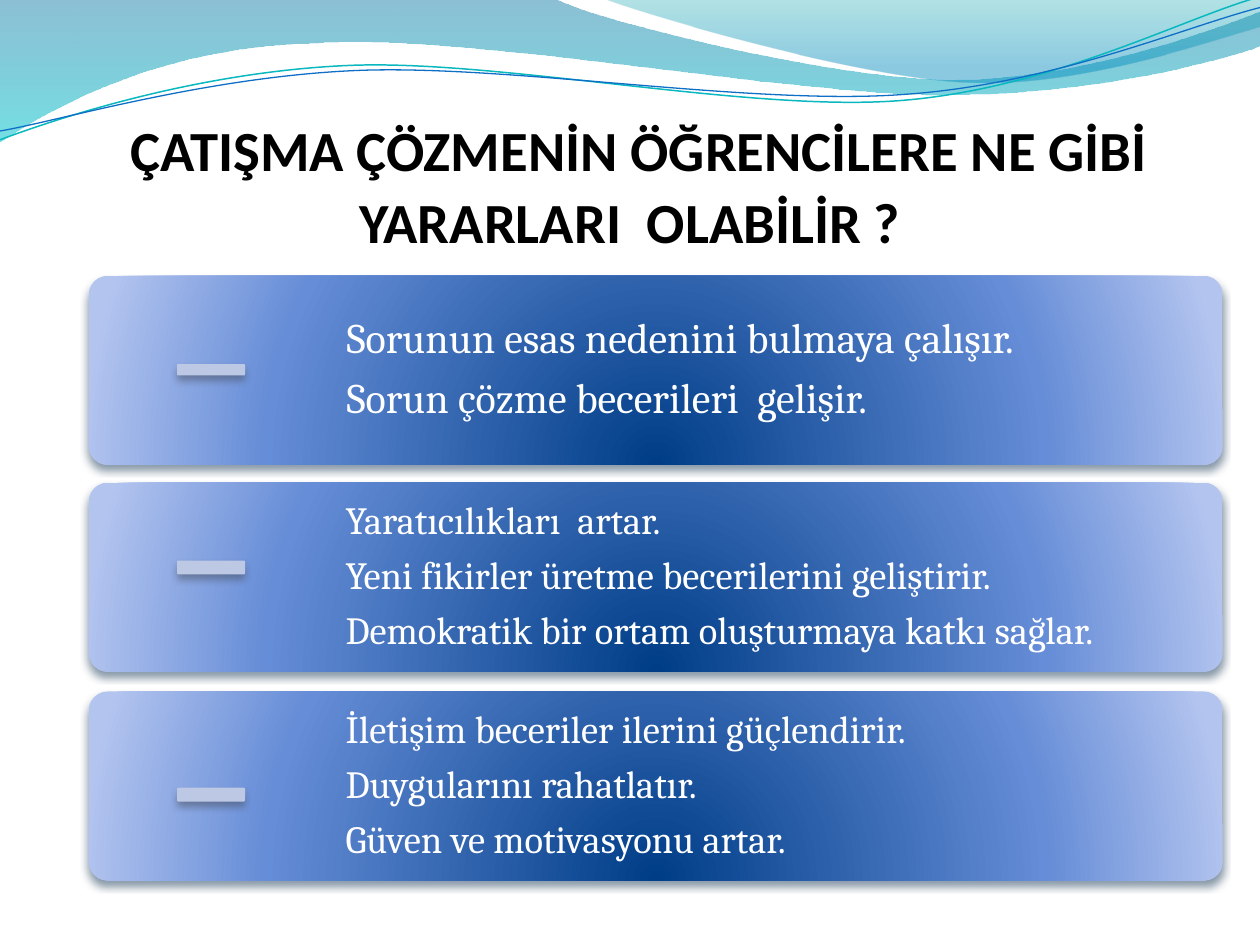
from pptx import Presentation
from pptx.dml.color import RGBColor
from pptx.enum.shapes import MSO_SHAPE as SHAPE
from pptx.enum.text import MSO_ANCHOR as ANCHOR, MSO_AUTO_SIZE as AUTO, PP_ALIGN as ALIGN
from pptx.oxml import parse_xml
from pptx.oxml.ns import nsdecls
from pptx.util import Cm, Pt

C = {"black": "000000", "white": "FFFFFF", "title": "04617B", "dash": "BDC8E5",
     "card_shadow": "042747", "dash_shadow": "424651",
     "teal_line": "0AB8BF", "blue_line": "0F6FC6"}
CARD_STOPS = [(0, "003D87", 100), (68, "668DD7", 100), (100, "B3C4EF", 100)]
CARD_DIRECTION = ('<a:path path="circle"><a:fillToRect l="50000" t="130000" '
                  'r="50000" b="-30000"/></a:path>')
DOWN = '<a:lin ang="5400000" scaled="0"/>'


def set_gradient(sp, stops, direction):
    sp.fill.gradient()
    old = sp._element.spPr.find("{*}gradFill")
    gs = "".join(f'<a:gs pos="{pos * 1000}"><a:srgbClr val="{color}">'
                 f'<a:alpha val="{alpha * 1000}"/></a:srgbClr></a:gs>'
                 for pos, color, alpha in stops)
    old.getparent().replace(old, parse_xml(
        f'<a:gradFill {nsdecls("a")} rotWithShape="1"><a:gsLst>{gs}</a:gsLst>{direction}</a:gradFill>'))


def set_shadow(sp, color):
    sp.shadow.inherit = False
    sp._element.spPr.find("{*}effectLst").append(parse_xml(
        f'<a:outerShdw {nsdecls("a")} blurRad="{Pt(4.5)}" dist="{Pt(3)}" dir="5400000" '
        f'rotWithShape="0"><a:srgbClr val="{color}"><a:alpha val="48000"/></a:srgbClr></a:outerShdw>'))


prs = Presentation()
prs.slide_width, prs.slide_height = Cm(25.4), Cm(19.05)
s = prs.slides.add_slide(prs.slide_layouts[5])

# Waves: start point, then segments (2 numbers = line, 6 = Bezier curve), 1000 units = slide width
UNIT = Cm(0.0254)
waves = [
    ((0, 0), [(440, -1), (476, 17, 664, 63, 758, 63), (853, 63, 958, 26, 1000, 9),
              (1001, 36), (983, 44, 870, 76, 746, 75), (622, 75, 382, 28, 257, 34),
              (129, 36, 46, 83, -1, 113)],
     [(0, "0074A1", 45), (100, "00C6CF", 55)], None),
    ((479, -1), [(509, 11, 682, 62, 769, 65), (856, 69, 961, 32, 1000, 21), (1000, 0)],
     [(0, "00A1A9", 30), (80, "008BBF", 45)], None),
    ((0, 111), [(48, 93, 158, 57, 277, 52), (395, 47, 593, 89, 713, 80),
                (833, 71, 938, 15, 998, -2)], None, ("teal_line", 0.85)),
    ((0, 104), [(47, 96, 164, 61, 283, 56), (403, 51, 597, 84, 717, 75),
                (836, 67, 941, 21, 1000, 6)], None, ("blue_line", 0.75)),
]
for start, segments, stops, line in waves:
    ends = [seg[-2:] for seg in segments]
    fb = s.shapes.build_freeform(*start, scale=UNIT)
    fb.add_line_segments(ends, close=stops is not None)
    sp = fb.convert_to_shape()
    sp.shadow.inherit = False
    # Turn the straight segments into curves, relative to the outline's top left
    left, top = (min(v) for v in zip(start, *ends))
    for straight, seg in zip(list(sp._element.iter("{*}lnTo")), segments):
        if len(seg) == 6:
            pts = "".join(f'<a:pt x="{x - left}" y="{y - top}"/>'
                          for x, y in zip(seg[::2], seg[1::2]))
            straight.getparent().replace(straight, parse_xml(
                f'<a:cubicBezTo {nsdecls("a")}>{pts}</a:cubicBezTo>'))
    if stops:
        set_gradient(sp, stops, DOWN)
        sp.line.fill.background()
    else:
        sp.fill.background()
        sp.line.color.rgb = RGBColor.from_string(C[line[0]])
        sp.line.width = Pt(line[1])

# Title
title = s.shapes.title
title.left, title.top, title.width, title.height = Cm(1.27), Cm(1.96), Cm(22.86), Cm(3.18)
tf = title.text_frame
tf.word_wrap, tf.auto_size, tf.vertical_anchor = True, AUTO.NONE, ANCHOR.BOTTOM
tf.margin_left = tf.margin_right = tf.margin_bottom = 0
tf.margin_top = Cm(0.13)
p = tf.paragraphs[0]
p.alignment = ALIGN.CENTER
for text, size, color, bold in [
        (" ", 45, "title", False),
        ("ÇATIŞMA ÇÖZMENİN ÖĞRENCİLERE NE GİBİ YARARLARI  OLABİLİR ?", 32.4, "black", True)]:
    r = p.add_run()
    r.text = text
    r.font.name, r.font.size, r.font.bold = "Calibri", Pt(size), bold
    r.font.color.rgb = RGBColor.from_string(C[color])

# Benefit cards: top, lines, text size, alignment, inset, dash top, dash height
cards = [
    (5.56, ["Sorunun esas nedenini bulmaya çalışır.", "Sorun çözme becerileri  gelişir."],
     24, ALIGN.JUSTIFY, 0.25, 7.34, 0.23),
    (9.73, ["Yaratıcılıkları  artar.", "Yeni fikirler üretme becerilerini geliştirir.",
            "Demokratik bir ortam oluşturmaya katkı sağlar."], 22, ALIGN.LEFT, 0.23, 11.3, 0.28),
    (13.94, ["İletişim beceriler ilerini güçlendirir.", "Duygularını rahatlatır.",
             "Güven ve motivasyonu artar."], 22, ALIGN.LEFT, 0.23, 15.88, 0.28),
]
CARD_H = Cm(3.81)
for top, lines, size, align, inset, dash_top, dash_h in cards:
    card = s.shapes.add_shape(SHAPE.ROUNDED_RECTANGLE, Cm(1.79), Cm(top), Cm(22.86), CARD_H)
    set_gradient(card, CARD_STOPS, CARD_DIRECTION)
    set_shadow(card, C["card_shadow"])

    box = s.shapes.add_textbox(Cm(6.74), Cm(top), Cm(17.91), CARD_H)
    tf = box.text_frame
    tf.word_wrap, tf.vertical_anchor = True, ANCHOR.MIDDLE
    tf.margin_left = tf.margin_right = tf.margin_top = tf.margin_bottom = Cm(inset)
    tf.text = "\n".join(lines)
    for p in tf.paragraphs:
        p.alignment, p.line_spacing, p.space_after = align, 0.9, Pt(size * 0.35)
        font = p.runs[0].font
        font.name, font.size = "Cambria", Pt(size)
        font.color.rgb = RGBColor.from_string(C["white"])

    dash = s.shapes.add_shape(SHAPE.ROUNDED_RECTANGLE, Cm(3.57), Cm(dash_top), Cm(1.37), Cm(dash_h))
    dash.fill.solid()
    dash.fill.fore_color.rgb = RGBColor.from_string(C["dash"])
    set_shadow(dash, C["dash_shadow"])
    for sp in (card, dash):
        sp.adjustments[0] = 0.1
        sp.line.fill.background()

prs.save("out.pptx")
